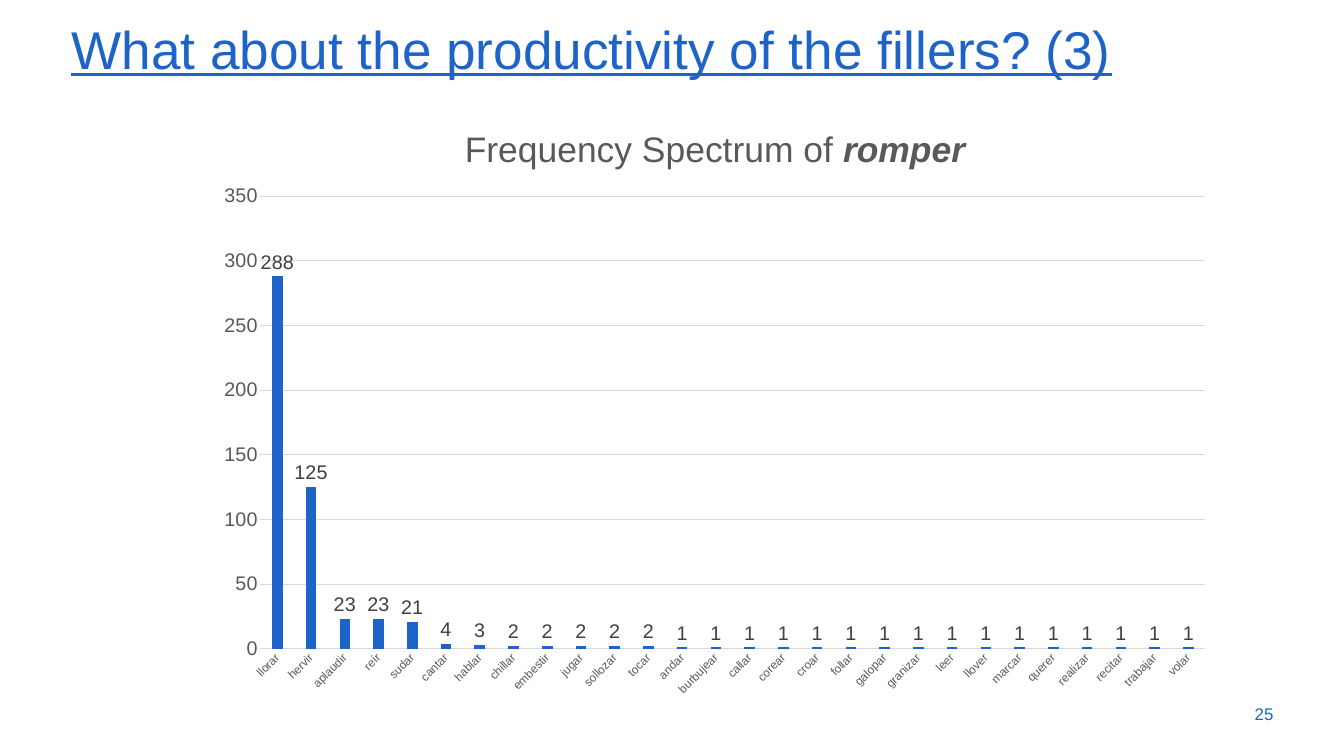
"""Build the slide on the frequency spectrum of the fillers of romper."""
from dataclasses import dataclass

from lxml import etree
from pptx import Presentation
from pptx import util as u
from pptx.chart.data import CategoryChartData
from pptx.dml.color import RGBColor
from pptx.enum import chart as charts, text
from pptx.oxml import parse_xml
from pptx.oxml.ns import qn

HEADING = "What about the productivity of the fillers? (3)"
PAGE_NUMBER = "25"
CHART_TITLE = [("Frequency Spectrum of ", False), ("romper", True)]
FREQUENCIES = {
    "llorar": 288, "hervir": 125, "aplaudir": 23, "reír": 23, "sudar": 21,
    "cantar": 4, "hablar": 3,
}
FREQUENCIES.update(dict.fromkeys(
    ["chillar", "embestir", "jugar", "sollozar", "tocar"], 2))
FREQUENCIES.update(dict.fromkeys(
    ["andar", "burbujear", "callar", "corear", "croar", "follar", "galopar",
     "granizar", "leer", "llover", "marcar", "querer", "realizar", "recitar",
     "trabajar", "volar"], 1))

SLIDE_SIZE = (48.16, 27.1)
HEADING_BOX = (2.31, 0.71, 43.64, 2.39)
NUMBER_BOX = (43.31, 24.87, 2.57, 1.45)
CHART_BOX = (7.32, 3.99, 36.6, 21.41)
PLOT_BOX = (9.32, 7.03, 33.85, 16.23)


@dataclass(frozen=True)
class Theme:
    """Colours and type sizes."""
    font: str = "Arial"
    blue: str = "1E64C8"
    grey: str = "595959"
    label: str = "404040"
    rule: str = "D9D9D9"
    heading_size: float = 54
    number_size: float = 17.1
    title_size: float = 36
    value_size: float = 20
    category_size: float = 12


THEME = Theme()


def style_font(font, size, colour):
    font.name = THEME.font
    font.size = u.Pt(size)
    font.color.rgb = RGBColor.from_string(colour)


def style_line(line):
    line.color.rgb = RGBColor.from_string(THEME.rule)
    line.width = u.Pt(0.75)


def add_text(slide, box, words, size):
    shape = slide.shapes.add_textbox(*map(u.Cm, box))
    shape.text_frame.word_wrap = True
    paragraph = shape.text_frame.paragraphs[0]
    run = paragraph.add_run()
    run.text = words
    style_font(run.font, size, THEME.blue)
    return shape.text_frame, paragraph, run


def place_plot(chart):
    left, top, width, height = CHART_BOX
    plot_left, plot_top, plot_width, plot_height = PLOT_BOX
    fractions = {
        "x": (plot_left - left) / width, "y": (plot_top - top) / height,
        "w": plot_width / width, "h": plot_height / height,
    }
    modes = "".join(f'<c:{key}Mode val="edge"/>' for key in "xy")
    sizes = "".join(f'<c:{key} val="{value:.3f}"/>'
                    for key, value in fractions.items())
    layout = parse_xml(
        '<c:layout xmlns:c="http://schemas.openxmlformats.org/drawingml/2006/chart">'
        f'<c:manualLayout><c:layoutTarget val="inner"/>{modes}{sizes}'
        '</c:manualLayout></c:layout>')
    plot_area = chart.element.find(".//" + qn("c:plotArea"))
    for previous in plot_area.findall(qn("c:layout")):
        plot_area.remove(previous)
    plot_area.insert(0, layout)


def style_axes(chart):
    categories, values = chart.category_axis, chart.value_axis
    for axis, size in ((categories, THEME.category_size),
                       (values, THEME.value_size)):
        axis.major_tick_mark = axis.minor_tick_mark = charts.XL_TICK_MARK.NONE
        style_font(axis.tick_labels.font, size, THEME.grey)
    categories.has_major_gridlines = False
    style_line(categories.format.line)
    body = categories._element.find(qn("c:txPr")).find(qn("a:bodyPr"))
    body.set("rot", "-2700000")
    body.set("vert", "horz")
    values.minimum_scale, values.maximum_scale, values.major_unit = 0, 350, 50
    values.format.line.fill.background()
    values.has_major_gridlines = True
    style_line(values.major_gridlines.format.line)


def add_spectrum(slide):
    data = CategoryChartData()
    data.categories = list(FREQUENCIES)
    data.add_series("Series 1", list(FREQUENCIES.values()))
    chart = slide.shapes.add_chart(
        charts.XL_CHART_TYPE.COLUMN_CLUSTERED, *map(u.Cm, CHART_BOX), data).chart
    chart.has_legend = False
    chart.font.name = THEME.font
    chart.font.size = u.Pt(10)
    chart.has_title = True
    chart.chart_title.include_in_layout = False
    paragraph = chart.chart_title.text_frame.paragraphs[0]
    for words, emphasis in CHART_TITLE:
        run = paragraph.add_run()
        run.text = words
        style_font(run.font, THEME.title_size, THEME.grey)
        run.font.bold = run.font.italic = emphasis
    plot = chart.plots[0]
    plot.gap_width, plot.overlap = 219, -27
    plot.vary_by_categories = False
    series = plot.series[0]
    series.format.fill.solid()
    series.format.fill.fore_color.rgb = RGBColor.from_string(THEME.blue)
    labels = series.data_labels
    labels.show_value = True
    labels.position = charts.XL_LABEL_POSITION.OUTSIDE_END
    style_font(labels.font, THEME.value_size, THEME.label)
    style_axes(chart)
    place_plot(chart)


def main():
    presentation = Presentation()
    presentation.slide_width, presentation.slide_height = map(u.Cm, SLIDE_SIZE)
    slide = presentation.slides.add_slide(presentation.slide_layouts[6])
    _, paragraph, run = add_text(slide, HEADING_BOX, HEADING, THEME.heading_size)
    paragraph.line_spacing = 0.9
    run.font.underline = True
    frame, paragraph, _ = add_text(slide, NUMBER_BOX, PAGE_NUMBER, THEME.number_size)
    frame.vertical_anchor = text.MSO_ANCHOR.MIDDLE
    paragraph.alignment = text.PP_ALIGN.RIGHT
    add_spectrum(slide)
    presentation.save("out.pptx")


if __name__ == "__main__":
    main()
